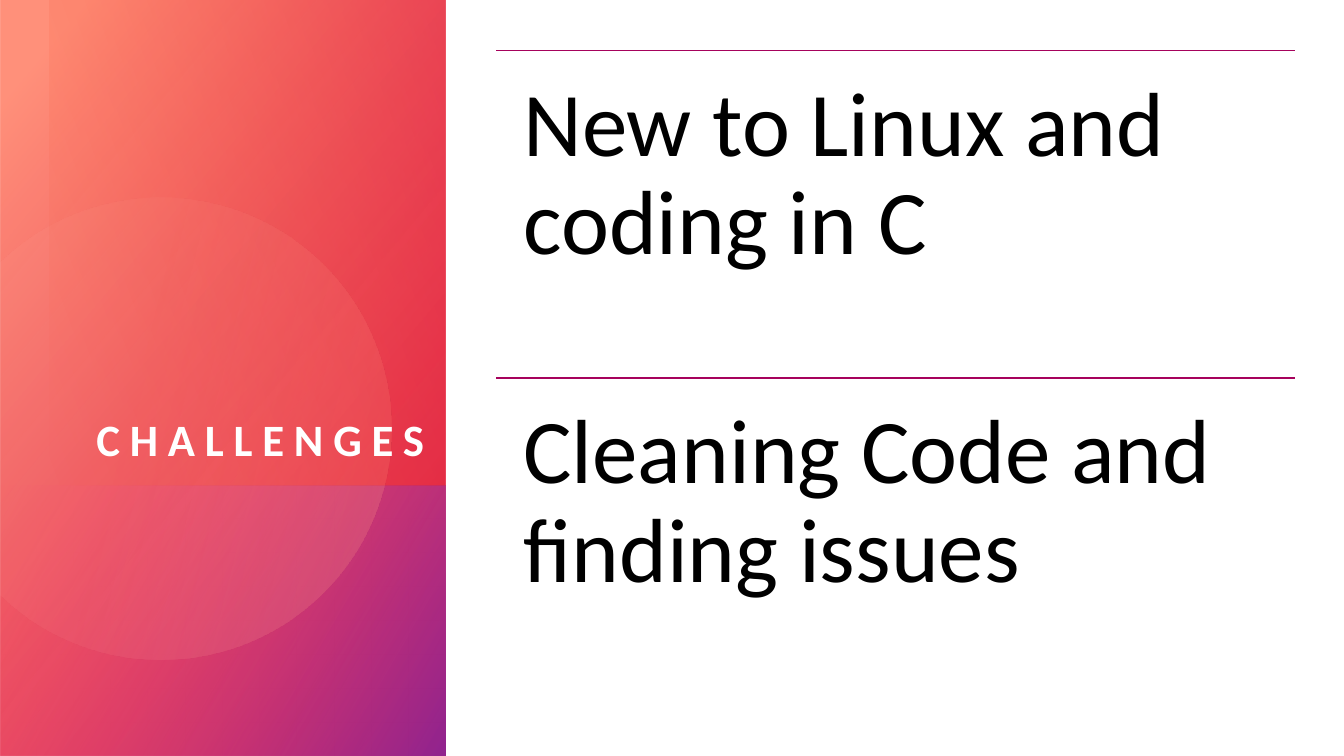
from dataclasses import dataclass
from math import acos, cos, sin

from lxml.etree import SubElement
from pptx import Presentation
from pptx.dml.color import RGBColor
from pptx.enum.shapes import MSO_CONNECTOR, MSO_SHAPE
from pptx.enum.text import MSO_ANCHOR, MSO_AUTO_SIZE, PP_ALIGN
from pptx.oxml.ns import qn
from pptx.util import Inches, Pt


@dataclass(frozen=True)
class Theme:
    font: str = "Calibri"
    title_size: int = 32
    title_spacing: int = 7
    statement_size: int = 65
    title_color: str = "FFFFFF"
    statement_color: str = "000000"
    rule_color: str = "A6025C"
    panel: tuple = ((8, "FF907A", 100), (100, "DA002F", 89))
    corner: tuple = ((0, "FF5076", 0), (99, "92248E", 100))
    disc: tuple = ((36, "FFBCAF", 6), (100, "FF907A", 26))
    glow: tuple = ((0, "DA002F", 29), (100, "FE4A00", 0))


THEME = Theme()
STATEMENTS = ("New to Linux and coding in C", "Cleaning Code and finding issues")


def apply_format(target, values):
    for name, value in values.items():
        setattr(target, name, value)


def paint_gradient(shape, stops, angle):
    shape.shadow.inherit = False
    shape.line.fill.background()
    shape.fill.gradient()
    gradient = shape.element.spPr.find(qn("a:gradFill"))
    gradient.set("rotWithShape", "1")
    for child in list(gradient):
        gradient.remove(child)
    stop_list = SubElement(gradient, qn("a:gsLst"))
    for position, color, opacity in stops:
        stop = SubElement(stop_list, qn("a:gs"), pos=str(position * 1000))
        tint = SubElement(stop, qn("a:srgbClr"), val=color)
        if opacity < 100:
            SubElement(tint, qn("a:alpha"), val=str(opacity * 1000))
    SubElement(gradient, qn("a:lin"), ang=str(angle * 60000), scaled="0")


def add_turned_panel(slide, frame, rotation, stops, angle):
    panel = slide.shapes.add_shape(MSO_SHAPE.RECTANGLE, *map(Inches, frame))
    panel.rotation = rotation
    panel.element.spPr.xfrm.set("flipH", "1")
    paint_gradient(panel, stops, angle)


def add_cut_disc(slide, center_x, center_y, radius, stops, angle, steps=120):
    reach = acos(-center_x / radius)
    turns = [reach * (2 * step / steps - 1) for step in range(steps + 1)]
    rim = [
        (Inches(center_x + radius * cos(turn)), Inches(center_y + radius * sin(turn)))
        for turn in turns
    ]
    outline = slide.shapes.build_freeform(*rim[0])
    outline.add_line_segments(rim[1:], close=True)
    paint_gradient(outline.convert_to_shape(), stops, angle)


def write_text(box, text, inset, anchor, alignment, size, color, bold=False):
    frame = box.text_frame
    apply_format(frame, {
        "text": text,
        "word_wrap": True,
        "auto_size": MSO_AUTO_SIZE.NONE,
        "vertical_anchor": anchor,
        **{f"margin_{side}": Inches(inset) for side in ("left", "top", "right", "bottom")},
    })
    paragraph = frame.paragraphs[0]
    paragraph.alignment = alignment
    paragraph.line_spacing = 0.9
    run = paragraph.runs[0]
    apply_format(run.font, {"name": THEME.font, "size": Pt(size), "bold": bold})
    run.font.color.rgb = RGBColor.from_string(color)
    return run


def add_title(slide, text):
    title = slide.shapes.title
    apply_format(title, {
        "left": Inches(0.5), "top": Inches(0.95),
        "width": Inches(3.71), "height": Inches(3.68),
    })
    run = write_text(title, text, 0, MSO_ANCHOR.BOTTOM, PP_ALIGN.RIGHT,
                     THEME.title_size, THEME.title_color, bold=True)
    run.font._element.set("spc", str(THEME.title_spacing * 100))


def add_statement(slide, text, left, top, width, height):
    rule = slide.shapes.add_connector(
        MSO_CONNECTOR.STRAIGHT, Inches(left), Inches(top), Inches(left + width), Inches(top)
    )
    rule.line.color.rgb = RGBColor.from_string(THEME.rule_color)
    rule.line.width = Pt(1)
    SubElement(rule.element.spPr, qn("a:effectLst"))
    statement = slide.shapes.add_textbox(*map(Inches, (left, top, width, height)))
    write_text(statement, text, 0.27, MSO_ANCHOR.TOP, PP_ALIGN.LEFT,
               THEME.statement_size, THEME.statement_color)


def main():
    deck = Presentation()
    deck.slide_width, deck.slide_height = Inches(13.33), Inches(7.5)
    slide = deck.slides.add_slide(deck.slide_layouts[5])
    add_turned_panel(slide, (-1.54, 1.54, 7.5, 4.42), 270, THEME.panel, 50)
    add_turned_panel(slide, (0.86, 3.95, 2.69, 4.42), 270, THEME.corner, 60)
    add_cut_disc(slide, 1.59, 4.25, 2.29, THEME.disc, 14)
    add_turned_panel(slide, (0.05, 0.45, 4.81, 3.92), 90, THEME.glow, 110)
    add_title(slide, "CHALLENGES")
    title = slide.shapes.title.element
    title.getparent().append(title)
    row_height = 3.25
    for row, text in enumerate(STATEMENTS):
        add_statement(slide, text, 4.92, 0.5 + row * row_height, 7.92, row_height)
    deck.save("out.pptx")


if __name__ == "__main__":
    main()
